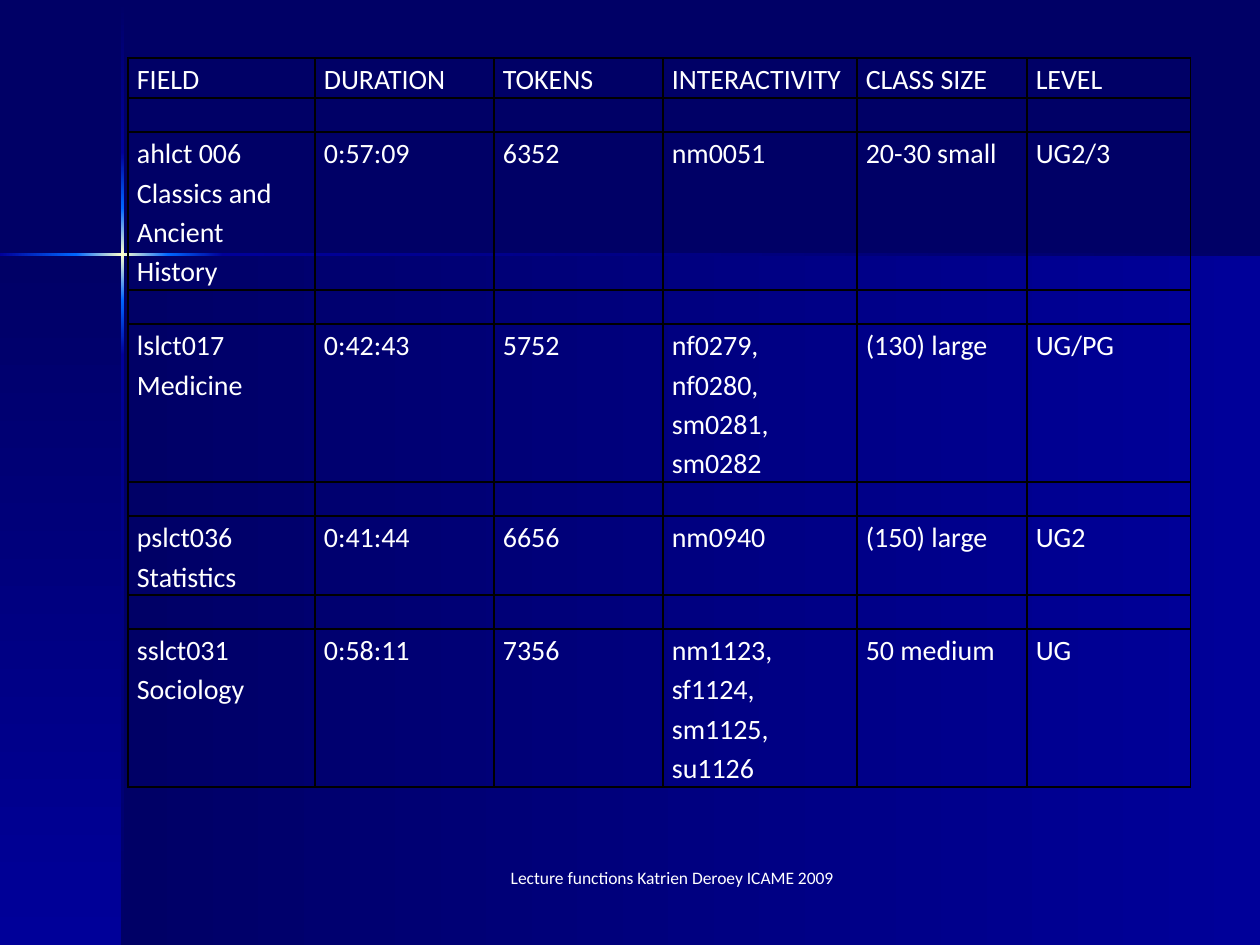
from copy import deepcopy
from dataclasses import dataclass

import lxml.etree
import pptx
import pptx.dml.color
import pptx.enum.shapes
import pptx.enum.text
import pptx.oxml.ns
import pptx.util

EMU_PER_PX = 914400 // 126
FONT = "Calibri"
BLACK = pptx.dml.color.RGBColor(0x00, 0x00, 0x00)
WHITE = pptx.dml.color.RGBColor(0xFF, 0xFF, 0xFF)
NAVY = pptx.dml.color.RGBColor(0x00, 0x00, 0x66)
BLUE = pptx.dml.color.RGBColor(0x00, 0x00, 0x99)
BRIGHT = pptx.dml.color.RGBColor(0x00, 0x66, 0xFF)
CREAM = pptx.dml.color.RGBColor(0xFF, 0xFF, 0xCC)


@dataclass(frozen=True)
class GradientBar:
    left: int
    top: int
    width: int
    height: int
    colors: tuple
    vertical: bool


BEAM = 3
BEAM_LEFT, BEAM_TOP = 121, 253
PANEL_LEFT, PANEL_TOP = 122, 255
GLOW = (BRIGHT, CREAM, BRIGHT)
PANELS = [
    GradientBar(PANEL_LEFT, PANEL_TOP, 1260 - PANEL_LEFT, 945 - PANEL_TOP, (NAVY, BLUE), False),
    GradientBar(0, PANEL_TOP, PANEL_LEFT, 945 - PANEL_TOP, (NAVY, BLUE), True),
]
# Each beam piece: start, end, colours along the beam
VERTICAL_BEAM = [
    (1, 152, (NAVY, BLUE)),
    (355, 945, (BLUE, NAVY)),
    (300, 355, (BRIGHT, BLUE)),
    (152, 208, (BLUE, BRIGHT)),
    (208, 300, GLOW),
]
HORIZONTAL_BEAM = [
    (223, 1260, (BLUE, NAVY)),
    (0, 76, (BLUE, BRIGHT)),
    (168, 223, (BRIGHT, BLUE)),
    (76, 168, GLOW),
]

COLUMN_WIDTHS = [187, 179, 169, 194, 170, 164]
SPACER_HEIGHT = 34
HEADER = ("FIELD", "DURATION", "TOKENS", "INTERACTIVITY", "CLASS SIZE", "LEVEL")
# Row height, then cell texts; a spacer row stands between each two
LECTURES = [
    (40, HEADER),
    (158, ("ahlct 006\nClasses".replace("Classes", "Classics and Ancient History"),
           "0:57:09", "6352", "nm0051", "20-30 small", "UG2/3")),
    (158, ("lslct017\nMedicine", "0:42:43", "5752",
           "nf0279, nf0280, sm0281, sm0282", "(130) large", "UG/PG")),
    (79, ("pslct036\nStatistics", "0:41:44", "6656", "nm0940", "(150) large", "UG2")),
    (158, ("sslct031\nSociology", "0:58:11", "7356",
           "nm1123, sf1124, sm1125, su1126", "50 medium", "UG")),
]


def px(length: int) -> int:
    return pptx.util.Emu(length * EMU_PER_PX)


def draw_bar(slide, bar: GradientBar) -> None:
    shape = slide.shapes.add_shape(
        pptx.enum.shapes.MSO_SHAPE.RECTANGLE,
        px(bar.left), px(bar.top), px(bar.width), px(bar.height))
    shape.shadow.inherit = False
    shape.line.fill.background()
    shape.fill.gradient()
    shape.fill.gradient_angle = 270 if bar.vertical else 0
    stop_list = shape._element.spPr.find(".//" + pptx.oxml.ns.qn("a:gsLst"))
    while len(stop_list) < len(bar.colors):
        stop_list.append(deepcopy(stop_list[0]))
    for index, (stop, color) in enumerate(zip(shape.fill.gradient_stops, bar.colors)):
        stop.position = index / (len(bar.colors) - 1)
        stop.color.rgb = color


def style_paragraph(paragraph, size: int) -> None:
    paragraph.font.name = FONT
    paragraph.font.size = pptx.util.Pt(size)
    paragraph.font.color.rgb = WHITE


def set_borders(cell, color: pptx.dml.color.RGBColor, width: int) -> None:
    qn = pptx.oxml.ns.qn
    properties = cell._tc.get_or_add_tcPr()
    for index, side in enumerate(("a:lnL", "a:lnR", "a:lnT", "a:lnB")):
        line = lxml.etree.Element(qn(side), w=str(pptx.util.Pt(width)))
        fill = lxml.etree.SubElement(line, qn("a:solidFill"))
        lxml.etree.SubElement(fill, qn("a:srgbClr"), val=str(color))
        properties.insert(index, line)


def fill_cell(cell, text: str) -> None:
    cell.margin_left = cell.margin_right = px(9)
    cell.margin_top = cell.margin_bottom = 0
    cell.fill.background()
    set_borders(cell, BLACK, 1)
    cell.text = text
    for paragraph in cell.text_frame.paragraphs:
        style_paragraph(paragraph, 16)
        if text:
            paragraph.line_spacing = 1.15
        else:
            # An empty paragraph takes its height from its end mark
            paragraph._p.get_or_add_endParaRPr().set("sz", "1600")


def draw_table(slide) -> None:
    spacer = (SPACER_HEIGHT, ("",) * len(HEADER))
    rows = [LECTURES[0]]
    for lecture in LECTURES[1:]:
        rows += [spacer, lecture]
    table = slide.shapes.add_table(
        len(rows), len(HEADER), px(128), px(58),
        px(sum(COLUMN_WIDTHS)), px(sum(height for height, _ in rows))).table
    table.first_row = table.horz_banding = False
    for column, width in zip(table.columns, COLUMN_WIDTHS):
        column.width = px(width)
    for row, (height, texts) in zip(table.rows, rows):
        row.height = px(height)
        for cell, text in zip(row.cells, texts):
            fill_cell(cell, text)


def draw_footer(slide) -> None:
    frame = slide.shapes.add_textbox(px(472), px(861), px(400), px(63)).text_frame
    frame.word_wrap = True
    paragraph = frame.paragraphs[0]
    paragraph.text = "Lecture functions Katrien Deroey ICAME 2009"
    paragraph.alignment = pptx.enum.text.PP_ALIGN.CENTER
    style_paragraph(paragraph, 10)


def main() -> None:
    presentation = pptx.Presentation()
    presentation.slide_width = pptx.util.Inches(10)
    presentation.slide_height = pptx.util.Inches(7.5)
    slide = presentation.slides.add_slide(presentation.slide_layouts[6])
    slide.background.fill.solid()
    slide.background.fill.fore_color.rgb = NAVY
    for panel in PANELS:
        draw_bar(slide, panel)
    for start, end, colors in VERTICAL_BEAM:
        draw_bar(slide, GradientBar(BEAM_LEFT, start, BEAM, end - start, colors, True))
    for start, end, colors in HORIZONTAL_BEAM:
        draw_bar(slide, GradientBar(start, BEAM_TOP, end - start, BEAM, colors, False))
    draw_footer(slide)
    draw_table(slide)
    presentation.save("out.pptx")


if __name__ == "__main__":
    main()
